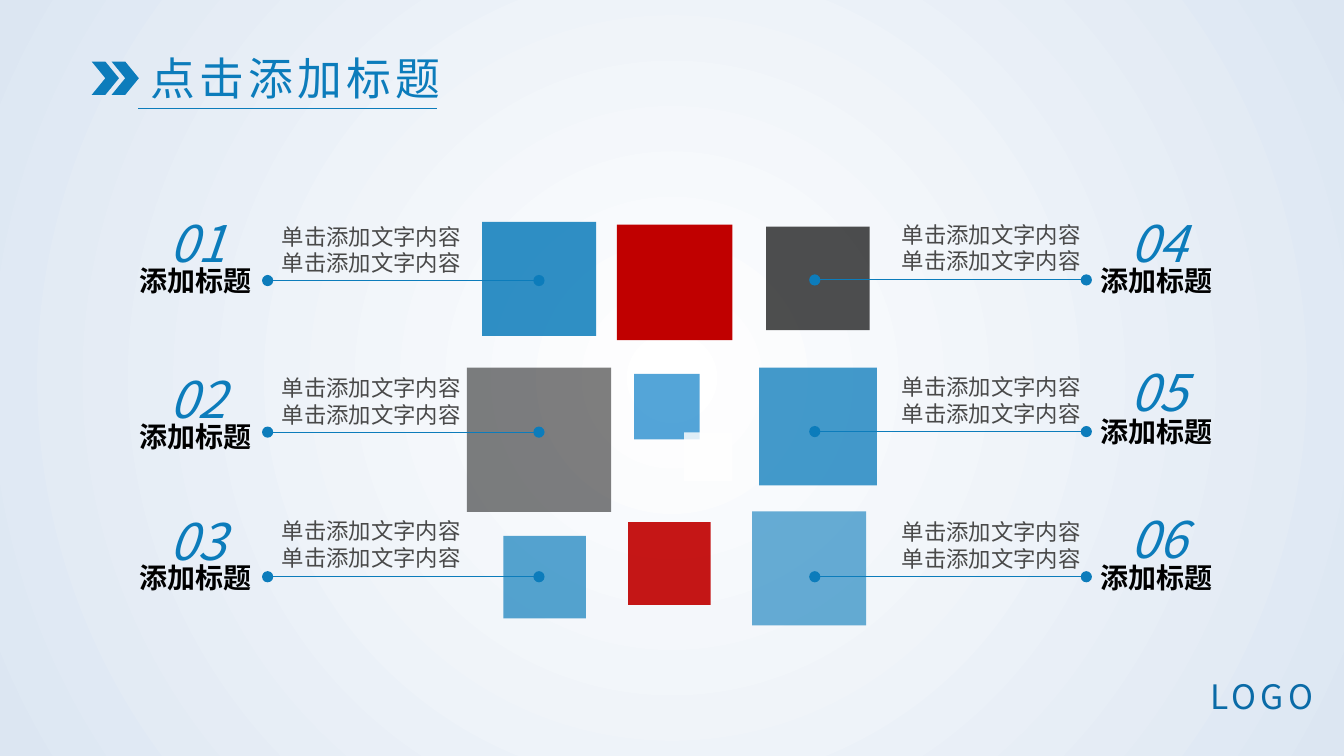
from lxml import etree
from pptx import Presentation
from pptx.dml.color import RGBColor
from pptx.enum.shapes import MSO_CONNECTOR, MSO_SHAPE
from pptx.enum.text import MSO_AUTO_SIZE, PP_ALIGN
from pptx.oxml.ns import qn
from pptx.util import Pt

RECT, OVAL, CHEVRON = MSO_SHAPE.RECTANGLE, MSO_SHAPE.OVAL, MSO_SHAPE.CHEVRON
STRAIGHT = MSO_CONNECTOR.STRAIGHT
LEFT, CENTER = PP_ALIGN.LEFT, PP_ALIGN.CENTER
GROW = MSO_AUTO_SIZE.SHAPE_TO_FIT_TEXT

FONT = "Noto Sans CJK SC"
COLORS = {
    "blue": "0C7CBB", "sky": "0079C6", "navy": "0A6BA7", "red": "C00000",
    "black": "000000", "gray": "494949", "white": "FFFFFF", "pale": "DCE6F2",
}
DOT = 8

# left, top, side, colour, opacity in percent
SQUARES = [
    (344.3, 158.4, 81.5, "blue", 85),
    (440.7, 160.5, 82.5, "red", 100),
    (453, 267, 46.8, "sky", 67),
    (542.2, 262.6, 84.2, "blue", 77),
    (547.2, 161.8, 74, "black", 69),
    (333.5, 262.6, 103, "black", 50),
    (537.2, 365.2, 81.5, "blue", 62),
    (488.7, 308.9, 34.6, "white", 82),
    (359.6, 382.8, 59, "blue", 69),
    (448.6, 373, 59, "red", 91),
]

# Left edges of number, label and body, then both dot centres
SIDES = [(105.8, 92.2, 169.2, 191.2, 385), (792.7, 779, 612, 582, 776)]

# Heights of number, label, body and wire, three items to a side
ITEMS = [
    (147.6, 184.3, 155.5, 200.4),
    (259.2, 295.9, 263.5, 308.7),
    (360.7, 396.7, 365.8, 412),
    (147.6, 184.3, 154.1, 200),
    (254.2, 292.3, 262.8, 308.3),
    (359.3, 396.7, 366.5, 412),
]


def rgb(name):
    return RGBColor.from_string(COLORS[name])


def add_back(slide):
    fill = slide.background.fill
    fill.gradient()
    for stop, name in zip(fill.gradient_stops, ("white", "pale")):
        stop.color.rgb = rgb(name)
    grad = next(slide.element.iter(qn("a:gradFill")))
    grad.remove(grad.find(qn("a:lin")))
    path = etree.SubElement(grad, qn("a:path"), path="circle")
    etree.SubElement(path, qn("a:fillToRect"),
                     l="50000", t="50000", r="50000", b="50000")


def add_form(slide, kind, x, y, w, h, color, alpha=100):
    form = slide.shapes.add_shape(kind, Pt(x), Pt(y), Pt(w), Pt(h))
    form.shadow.inherit = False
    form.line.fill.background()
    form.fill.solid()
    form.fill.fore_color.rgb = rgb(color)
    if alpha < 100:
        tint = next(form.element.spPr.iter(qn("a:srgbClr")))
        etree.SubElement(tint, qn("a:alpha"), val=str(alpha * 1000))


def add_line(slide, x1, x2, y):
    line = slide.shapes.add_connector(STRAIGHT, Pt(x1), Pt(y), Pt(x2), Pt(y))
    line.line.color.rgb = rgb("blue")
    line.line.width = Pt(0.75)
    etree.SubElement(line.element.spPr, qn("a:effectLst"))


def add_text(slide, text, x, y, w, h, size, color="blue", align=CENTER,
             wrap=True, bold=False, italic=False, gap=0):
    box = slide.shapes.add_textbox(Pt(x), Pt(y), Pt(w), Pt(h))
    frame = box.text_frame
    frame.word_wrap = wrap
    frame.auto_size = GROW
    frame.text = text
    for para in frame.paragraphs:
        para.alignment = align
        for run in para.runs:
            font = run.font
            font.name, font.size = FONT, Pt(size)
            font.bold, font.italic = bold, italic
            font.color.rgb = rgb(color)
            props = run._r.get_or_add_rPr()
            etree.SubElement(props, qn("a:ea"), typeface=FONT)
            if gap:
                props.set("spc", str(gap * 100))


def add_wire(slide, x1, x2, y):
    add_line(slide, x1, x2, y)
    for x in (x1, x2):
        add_form(slide, OVAL, x - DOT / 2, y - DOT / 2, DOT, DOT, "blue")


def add_item(slide, index, tops):
    num_x, label_x, body_x, start, end = SIDES[index // 3]
    num_y, label_y, body_y, wire_y = tops
    add_wire(slide, start, end, wire_y)
    add_text(slide, "添加标题", label_x, label_y, 95, 31.5, 20,
             color="black", align=LEFT, wrap=False, bold=True)
    add_text(slide, "\n".join(["单击添加文字内容"] * 2), body_x, body_y,
             192.2, 46, 16, color="gray")
    add_text(slide, f"{index + 1:02}", num_x, num_y, 70, 51, 36, italic=True)


def main():
    deck = Presentation()
    deck.slide_width, deck.slide_height = Pt(960), Pt(540)
    slide = deck.slides.add_slide(deck.slide_layouts[6])
    add_back(slide)

    # Heading and mark
    add_text(slide, "点击添加标题", 98.5, 32.5, 225, 46, 32, gap=3)
    add_line(slide, 98.6, 312.5, 77.5)
    for x in (79.7, 65.5):
        add_form(slide, CHEVRON, x, 44, 19.5, 23.8, "blue")
    add_text(slide, "LOGO", 854, 479.5, 94.3, 36, 24, color="navy", gap=3)

    # Mosaic of squares
    for x, y, side, color, alpha in SQUARES:
        add_form(slide, RECT, x, y, side, side, color, alpha)

    # Numbered items
    for index, tops in enumerate(ITEMS):
        add_item(slide, index, tops)

    deck.save("out.pptx")


if __name__ == "__main__":
    main()
